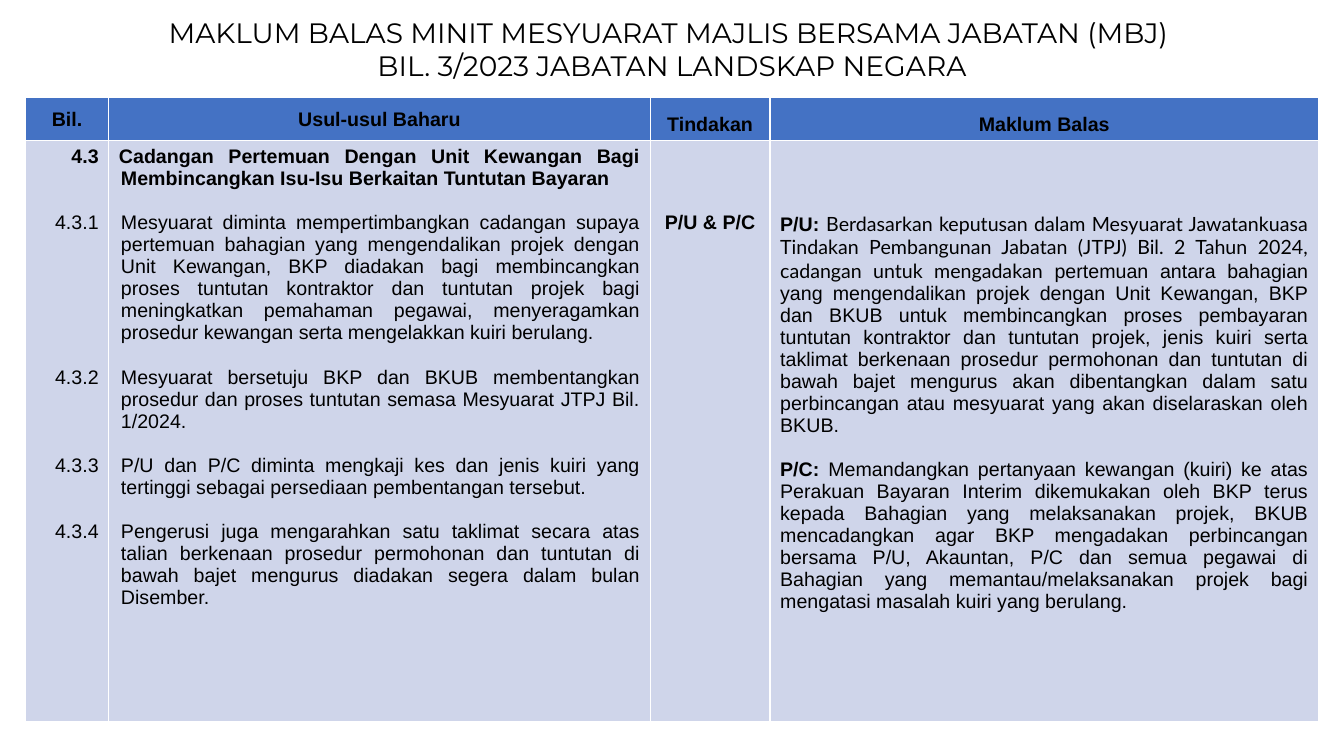
from dataclasses import dataclass

from lxml.etree import SubElement
from pptx import Presentation
from pptx.dml.color import RGBColor
from pptx.enum.text import MSO_ANCHOR as Anchor, PP_ALIGN as Align
from pptx.oxml.ns import qn
from pptx.table import _Cell as Cell
from pptx.text.text import TextFrame
from pptx.util import Inches, Pt

COLOURS = {"ink": "000000", "header": "4472C4", "body": "CFD5EA", "rule": "FFFFFF"}
SLIDE_WIDTH, SLIDE_HEIGHT = Inches(13.33), Inches(7.5)
LINE = 15.75
TEXT_SIZE, TITLE_SIZE = 14, 20
ROW_SHARES = (5.6, 76.8)


@dataclass(frozen=True)
class Span:
    text: str
    bold: bool = False
    font: str = "Arial"
    size: int = TEXT_SIZE


@dataclass(frozen=True)
class Para:
    spans: tuple[Span, ...]
    lines_before: int = 0
    hanging: float = 0
    left: float = 0
    line_spacing: float | None = None


@dataclass(frozen=True)
class Column:
    width: float
    heading: str
    heading_spacing: float | None
    align: Align
    paras: tuple[Para, ...]
    lines_above: int = 0


def across(share: float) -> int:
    return round(SLIDE_WIDTH * share / 100)


def down(share: float) -> int:
    return round(SLIDE_HEIGHT * share / 100)


def colour(name: str) -> RGBColor:
    return RGBColor.from_string(COLOURS[name])


def write(frame: TextFrame, paras: tuple[Para, ...], align: Align) -> None:
    for index, item in enumerate(paras):
        para = frame.add_paragraph() if index else frame.paragraphs[0]
        para.alignment = align
        para.space_before = Pt(item.lines_before * LINE)
        if item.line_spacing:
            para.line_spacing = item.line_spacing
        if item.left:
            properties = para._p.get_or_add_pPr()
            properties.set("marL", str(Inches(item.left)))
            properties.set("indent", str(-Inches(item.hanging)))
        for span in item.spans:
            run = para.add_run()
            run.text = span.text
            run.font.name = span.font
            run.font.size = Pt(span.size)
            run.font.bold = span.bold
            run.font.color.rgb = colour("ink")


def dress(cell: Cell, fill: str, anchor: Anchor, lines_above: int = 0) -> None:
    properties = cell._tc.get_or_add_tcPr()
    for side in ("lnL", "lnR", "lnT", "lnB"):
        border = SubElement(properties, qn(f"a:{side}"), w=str(Pt(1)))
        solid = SubElement(border, qn("a:solidFill"))
        SubElement(solid, qn("a:srgbClr"), val=COLOURS["rule"])
    cell.fill.solid()
    cell.fill.fore_color.rgb = colour(fill)
    cell.vertical_anchor = anchor
    cell.margin_left = cell.margin_right = Inches(0.1)
    cell.margin_top = Inches(0.05) + Pt(lines_above * LINE)
    cell.margin_bottom = Inches(0.05)


TITLE = tuple(
    Para((Span(text, font="Montserrat", size=TITLE_SIZE),))
    for text in (
        "MAKLUM BALAS MINIT MESYUARAT MAJLIS BERSAMA JABATAN (MBJ) ",
        "BIL. 3/2023 JABATAN LANDSKAP NEGARA",
    )
)

NUMBERS = (Para((Span("4.3", True),)),) + tuple(
    Para((Span(number),), lines)
    for number, lines in (("4.3.1", 2), ("4.3.2", 6), ("4.3.3", 3), ("4.3.4", 2))
)

PROPOSALS = (
    Para((Span("Cadangan Pertemuan Dengan Unit Kewangan Bagi Membincangkan Isu-Isu "
               "Berkaitan Tuntutan Bayaran", True),), hanging=0.02, left=0.02),
) + tuple(
    Para((Span(text),), 1, left=0.02)
    for text in (
        "Mesyuarat diminta mempertimbangkan cadangan supaya pertemuan bahagian yang "
        "mengendalikan projek dengan Unit Kewangan, BKP diadakan bagi membincangkan "
        "proses tuntutan kontraktor dan tuntutan projek bagi meningkatkan pemahaman "
        "pegawai, menyeragamkan prosedur kewangan serta mengelakkan kuiri berulang.",
        "Mesyuarat bersetuju BKP dan BKUB membentangkan prosedur dan proses tuntutan "
        "semasa Mesyuarat JTPJ Bil. 1/2024.",
        "P/U dan P/C diminta mengkaji kes dan jenis kuiri yang tertinggi sebagai "
        "persediaan pembentangan tersebut. ",
        "Pengerusi juga mengarahkan satu taklimat secara atas talian berkenaan prosedur "
        "permohonan dan tuntutan di bawah bajet mengurus diadakan segera dalam bulan "
        "Disember.",
    )
)

REPLIES = (
    Para((
        Span("P/U: ", True),
        Span("Berdasarkan keputusan dalam Mesyuarat Jawatankuasa Tindakan Pembangunan "
             "Jabatan (JTPJ) Bil. 2 Tahun 2024, cadangan untuk mengadakan ", font="Lato"),
        Span("pertemuan antara bahagian yang mengendalikan projek dengan Unit Kewangan, "
             "BKP dan BKUB untuk membincangkan proses pembayaran tuntutan kontraktor dan "
             "tuntutan projek, jenis kuiri serta taklimat berkenaan prosedur permohonan "
             "dan tuntutan di bawah bajet mengurus akan dibentangkan dalam satu "
             "perbincangan atau mesyuarat yang akan diselaraskan oleh BKUB."),
    )),
    Para((
        Span("P/C: ", True),
        Span("Memandangkan pertanyaan kewangan (kuiri) ke atas Perakuan Bayaran Interim "
             "dikemukakan oleh BKP terus kepada Bahagian yang melaksanakan projek, BKUB "
             "mencadangkan agar BKP mengadakan perbincangan bersama P/U, Akauntan, P/C "
             "dan semua pegawai di Bahagian yang memantau/melaksanakan projek bagi "
             "mengatasi masalah kuiri yang berulang."),
    ), 1),
)

COLUMNS = (
    Column(6.22, "Bil.", None, Align.RIGHT, NUMBERS),
    Column(40.28, "Usul-usul Baharu", None, Align.JUSTIFY, PROPOSALS),
    Column(8.92, "Tindakan", 1.5, Align.CENTER, (Para((Span("P/U & P/C", True),)),), 3),
    Column(40.81, "Maklum Balas", 1.5, Align.JUSTIFY, REPLIES, 3),
)


def main() -> None:
    deck = Presentation()
    deck.slide_width, deck.slide_height = SLIDE_WIDTH, SLIDE_HEIGHT
    page = deck.slides.add_slide(deck.slide_layouts[5])

    title = page.shapes.title
    title.left, title.top = across(5.1), down(1.33)
    title.width, title.height = across(89.8), down(10.27)
    title.text_frame.vertical_anchor = Anchor.TOP
    write(title.text_frame, TITLE, Align.CENTER)

    table = page.shapes.add_table(
        len(ROW_SHARES), len(COLUMNS), across(1.88), down(12.93),
        across(sum(column.width for column in COLUMNS)), down(sum(ROW_SHARES)),
    ).table
    table.first_row = table.horz_banding = False
    for row, share in zip(table.rows, ROW_SHARES):
        row.height = down(share)
    for index, column in enumerate(COLUMNS):
        table.columns[index].width = across(column.width)
        heading, body = table.cell(0, index), table.cell(1, index)
        dress(heading, "header", Anchor.MIDDLE)
        label = Para((Span(column.heading, True),), line_spacing=column.heading_spacing)
        write(heading.text_frame, (label,), Align.CENTER)
        dress(body, "body", Anchor.TOP, column.lines_above)
        write(body.text_frame, column.paras, column.align)

    deck.save("out.pptx")


if __name__ == "__main__":
    main()
